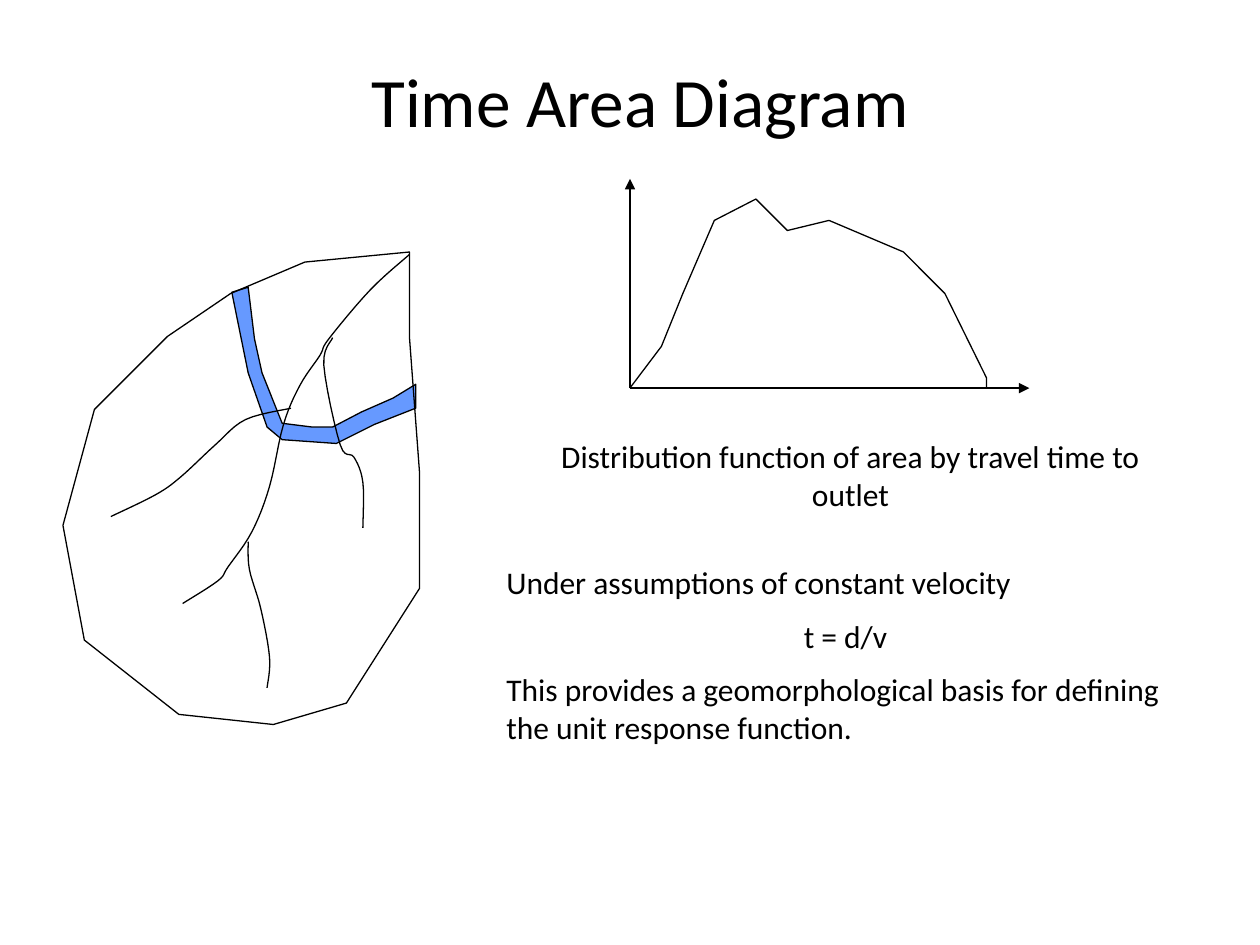
import pptx
import pptx.dml.color
import pptx.enum.shapes
import pptx.enum.text
import pptx.oxml
import pptx.oxml.ns
import pptx.util
from lxml import etree

Inches, Pt = pptx.util.Inches, pptx.util.Pt
PP_ALIGN = pptx.enum.text.PP_ALIGN
ANCHOR = pptx.enum.text.MSO_ANCHOR
qn = pptx.oxml.ns.qn

BLACK = pptx.dml.color.RGBColor(0x00, 0x00, 0x00)
BAND_BLUE = pptx.dml.color.RGBColor(0x66, 0x99, 0xFF)
FONT = "Calibri"
LINE_WIDTH = Pt(0.75)
CURVE_STEPS = 6

# Texts: box (left, top, width, height), size, anchor, (text, alignment) paragraphs
TEXTS = [
    ((0.83, 0.42, 8.5, 0.75), 39.6, ANCHOR.MIDDLE,
     [("Time Area Diagram", PP_ALIGN.CENTER)]),
    ((4.25, 3.42, 5, 0.9), 18, ANCHOR.TOP,
     [("Distribution function of area by travel time to outlet", PP_ALIGN.CENTER)]),
    ((3.92, 4.42, 5.58, 2.1), 18, ANCHOR.TOP,
     [("Under assumptions of constant velocity", PP_ALIGN.LEFT),
      ("t = d/v", PP_ALIGN.CENTER),
      ("This provides a geomorphological basis for defining the unit response function.",
       PP_ALIGN.LEFT)]),
]

TRAVEL_TIME_BAND = [
    (1.97, 2.28), (2.02, 2.69), (2.08, 2.96), (2.24, 3.36), (2.48, 3.39),
    (2.64, 3.39), (2.87, 3.27), (3.12, 3.16), (3.3, 3.05), (3.3, 3.24),
    (2.97, 3.37), (2.67, 3.52), (2.24, 3.49), (2.12, 3.39), (1.97, 2.96),
    (1.84, 2.32),
]
WATERSHED = [
    (3.25, 2), (2.42, 2.08), (1.83, 2.33), (1.33, 2.67), (0.75, 3.25),
    (0.5, 4.17), (0.67, 5.08), (1.42, 5.67), (2.17, 5.75), (2.75, 5.58),
    (3.33, 4.67), (3.33, 3.75), (3.25, 2.67),
]
# Points that each stream passes through
STREAMS = [
    [(3.25, 2.02), (2.94, 2.3), (2.61, 2.69), (2.54, 2.82), (2.38, 3.06),
     (2.25, 3.37), (2.14, 3.86), (2, 4.22), (1.81, 4.5), (1.73, 4.61), (1.45, 4.79)],
    [(2.31, 3.24), (1.95, 3.33), (1.71, 3.53), (1.43, 3.79), (1.23, 3.93), (0.88, 4.1)],
    [(2.64, 2.68), (2.57, 2.9), (2.7, 3.53), (2.81, 3.63), (2.88, 3.83), (2.88, 4.19)],
    [(1.97, 4.3), (1.98, 4.52), (2.07, 4.83), (2.14, 5.22), (2.12, 5.46)],
]

ORIGIN = (5, 3.08)
AXIS_ENDS = [(5, 1.42), (8.17, 3.08)]
AREA_CURVE = [
    ORIGIN, (5.25, 2.75), (5.42, 2.33), (5.67, 1.75), (6, 1.58), (6.25, 1.83),
    (6.58, 1.75), (7.17, 2), (7.5, 2.33), (7.83, 3), (7.83, 3.08),
]


def smooth_through(points):
    """Return points on a Catmull-Rom curve through the given ones."""
    padded = [points[0], *points, points[-1]]
    curve = [points[0]]
    for a, b, c, d in zip(padded, padded[1:], padded[2:], padded[3:]):
        for step in range(1, CURVE_STEPS + 1):
            t = step / CURVE_STEPS
            curve.append(tuple(
                q + t / 2 * (r - p + t * (2 * p - 5 * q + 4 * r - s
                                          + t * (3 * q - 3 * r + s - p)))
                for p, q, r, s in zip(a, b, c, d)))
    return curve


def style_line(line):
    line.color.rgb = BLACK
    line.width = LINE_WIDTH


def add_outline(group, points, close=False, fill=None):
    start, *rest = [(Inches(x), Inches(y)) for x, y in points]
    builder = group.shapes.build_freeform(*start)
    builder.add_line_segments(rest, close=close)
    outline = builder.convert_to_shape()
    outline.shadow.inherit = False
    if fill is None:
        outline.fill.background()
    else:
        outline.fill.solid()
        outline.fill.fore_color.rgb = fill
    style_line(outline.line)


def add_axis(group, start, end):
    axis = group.shapes.add_connector(
        pptx.enum.shapes.MSO_CONNECTOR.STRAIGHT, *map(Inches, start + end))
    style_line(axis.line)
    properties = axis._element.spPr
    etree.SubElement(properties.find(qn("a:ln")), qn("a:tailEnd"), type="triangle")
    etree.SubElement(properties, qn("a:effectLst"))


def add_text(slide, box, size, anchor, paragraphs):
    frame = slide.shapes.add_textbox(*map(Inches, box)).text_frame
    frame.word_wrap = True
    frame.vertical_anchor = anchor
    for i, (text, alignment) in enumerate(paragraphs):
        paragraph = frame.add_paragraph() if i else frame.paragraphs[0]
        paragraph.text = text
        paragraph.alignment = alignment
        paragraph.space_before = Pt(size / 2 if i else 0)
        paragraph.font.name = FONT
        paragraph.font.size = Pt(size)
        paragraph.font.color.rgb = BLACK


def main():
    deck = pptx.Presentation()
    deck.slide_width, deck.slide_height = Inches(10), Inches(7.5)
    slide = deck.slides.add_slide(deck.slide_layouts[6])

    basin = slide.shapes.add_group_shape()
    add_outline(basin, TRAVEL_TIME_BAND, close=True, fill=BAND_BLUE)
    add_outline(basin, WATERSHED, close=True)
    for stream in STREAMS:
        add_outline(basin, smooth_through(stream))

    diagram = slide.shapes.add_group_shape()
    for end in AXIS_ENDS:
        add_axis(diagram, ORIGIN, end)
    add_outline(diagram, AREA_CURVE)

    for text in TEXTS:
        add_text(slide, *text)
    deck.save("out.pptx")


if __name__ == "__main__":
    main()
